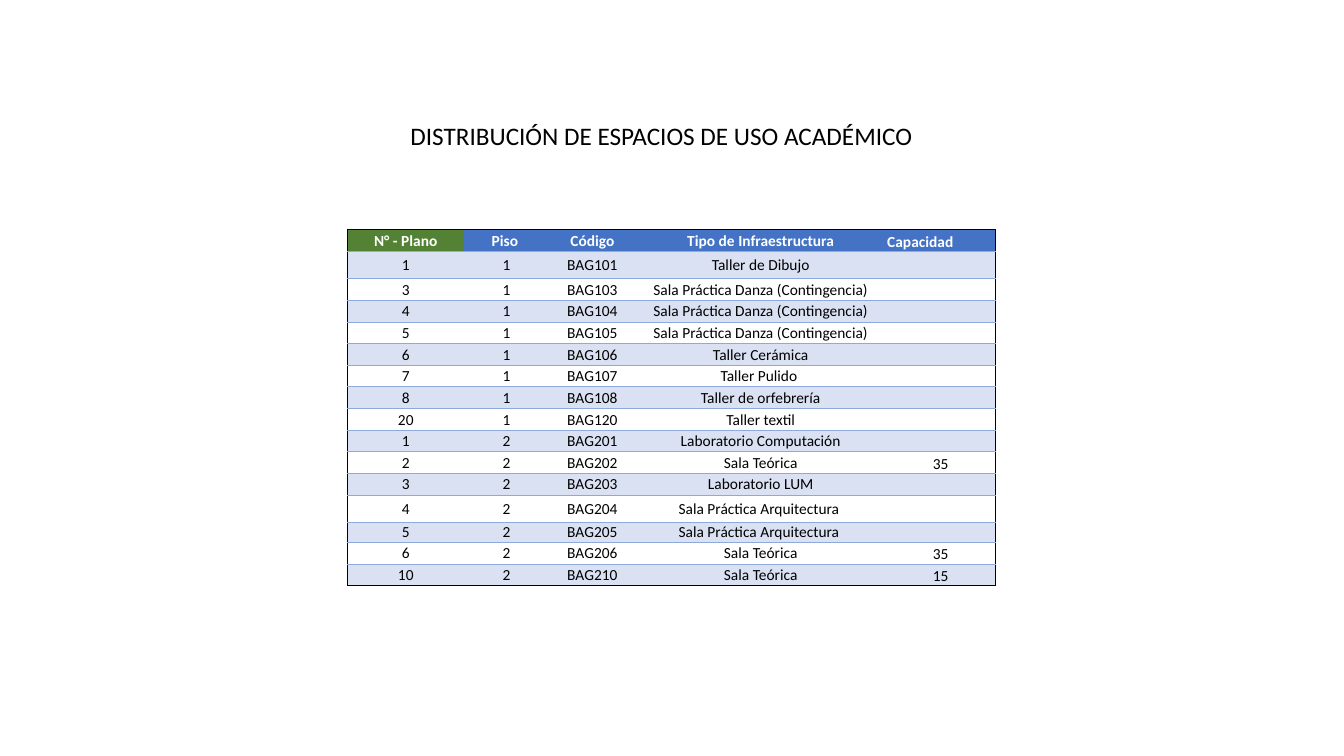
from lxml.etree import SubElement
from pptx import Presentation
from pptx.dml.color import RGBColor
from pptx.enum.text import MSO_ANCHOR as ANCHOR, MSO_AUTO_SIZE as AUTO, PP_ALIGN as ALIGN
from pptx.oxml.ns import qn
from pptx.util import Inches, Pt

BLACK = RGBColor(0x00, 0x00, 0x00)
WHITE = RGBColor(0xFF, 0xFF, 0xFF)
GREEN = RGBColor(0x54, 0x82, 0x35)
BLUE = RGBColor(0x44, 0x72, 0xC4)
BAND = RGBColor(0xD9, 0xE1, 0xF2)
RULE = RGBColor(0x8E, 0xA9, 0xDB)

FONT = "Calibri"
CELL_SIZE = Pt(11)
PLAIN_TABLE = "{2D5ABB26-0587-4C30-8999-92F81FD0307C}"
OUTLINE = (BLACK, 1)
DIVIDER = (RULE, 0.5)

TABLE_HEIGHT = 3.53
COLUMN_WIDTHS = (1.15, 0.85, 0.85, 2.49, 1.08)
SPECIAL_HEIGHTS = {1: 0.27, 12: 0.27, 13: 0.2}
HEADERS = ("N° - Plano", "Piso ", "Código", "Tipo de Infraestructura", "Capacidad")
SPACES = (
    ("1", "1", "BAG101", "Taller de Dibujo", ""),
    ("3", "1", "BAG103", "Sala Práctica Danza (Contingencia)", ""),
    ("4", "1", "BAG104", "Sala Práctica Danza (Contingencia)", ""),
    ("5", "1", "BAG105", "Sala Práctica Danza (Contingencia)", ""),
    ("6", "1", "BAG106", "Taller Cerámica", ""),
    ("7", "1", "BAG107", "Taller Pulido ", ""),
    ("8", "1", "BAG108", "Taller de orfebrería", ""),
    ("20", "1", "BAG120", "Taller textil", ""),
    ("1", "2", "BAG201", "Laboratorio Computación", ""),
    ("2", "2", "BAG202", "Sala Teórica", "35"),
    ("3", "2", "BAG203", "Laboratorio LUM", ""),
    ("4", "2", "BAG204", "Sala Práctica Arquitectura ", ""),
    ("5", "2", "BAG205", "Sala Práctica Arquitectura ", ""),
    ("6", "2", "BAG206", "Sala Teórica", "35"),
    ("10", "2", "BAG210", "Sala Teórica", "15"),
)


def set_all(obj, **values):
    for name, value in values.items():
        setattr(obj, name, value)


def write(p, text, size, color, bold=False):
    r = p.add_run()
    r.text = text
    set_all(r.font, name=FONT, size=size, bold=bold)
    r.font.color.rgb = color


def add_title(s, text):
    sp = s.shapes.title
    set_all(sp, left=Inches(3.97), top=Inches(1.12), width=Inches(5.39), height=Inches(0.41))
    tf = sp.text_frame
    set_all(tf, word_wrap=True, auto_size=AUTO.NONE, vertical_anchor=ANCHOR.TOP)
    p = tf.paragraphs[0]
    set_all(p, alignment=ALIGN.LEFT, line_spacing=1.07, space_before=Pt(0), space_after=Pt(8))
    write(p, text, Pt(18), BLACK)


def set_border(cell, side, line):
    ln = SubElement(cell._tc.get_or_add_tcPr(), qn(f"a:ln{side}"))
    if line is None:
        SubElement(ln, qn("a:noFill"))
        return
    color, width = line
    ln.set("w", str(Pt(width)))
    fill = SubElement(ln, qn("a:solidFill"))
    SubElement(fill, qn("a:srgbClr")).set("val", str(color))


def fill_cell(cell, color):
    if color is None:
        cell.fill.background()
    else:
        cell.fill.solid()
        cell.fill.fore_color.rgb = color


def format_cell(cell, text, row, col):
    last_row, last_col = len(SPACES), len(HEADERS) - 1
    header, capacity = row == 0, col == last_col
    borders = {
        "L": OUTLINE if col == 0 else None,
        "R": OUTLINE if capacity else None,
        "T": OUTLINE if header else DIVIDER,
        "B": OUTLINE if row == last_row else DIVIDER,
    }
    for side, line in borders.items():
        set_border(cell, side, line)
    if header:
        fill_cell(cell, GREEN if col == 0 else BLUE)
    else:
        fill_cell(cell, BAND if row % 2 else None)
    inset = Inches(0.01)
    set_all(cell, margin_left=inset, margin_top=inset, margin_right=inset, margin_bottom=0,
            vertical_anchor=ANCHOR.BOTTOM if capacity else ANCHOR.MIDDLE)
    p = cell.text_frame.paragraphs[0]
    p.alignment = ALIGN.LEFT if header and capacity else ALIGN.CENTER
    if text:
        write(p, text, CELL_SIZE, WHITE if header else BLACK, header)
    else:
        SubElement(p._p, qn("a:endParaRPr")).set("sz", str(CELL_SIZE.centipoints))


def add_spaces_table(s):
    rows = (HEADERS, *SPACES)
    frame = s.shapes.add_table(len(rows), len(HEADERS), Inches(3.45), Inches(2.28),
                               Inches(sum(COLUMN_WIDTHS)), Inches(TABLE_HEIGHT))
    table = frame.table
    set_all(table, first_row=False, horz_banding=False)
    table._tbl.tblPr.find(qn("a:tableStyleId")).text = PLAIN_TABLE
    for column, width in zip(table.columns, COLUMN_WIDTHS):
        column.width = Inches(width)
    regular = (TABLE_HEIGHT - sum(SPECIAL_HEIGHTS.values())) / (len(rows) - len(SPECIAL_HEIGHTS))
    for i, values in enumerate(rows):
        table.rows[i].height = Inches(SPECIAL_HEIGHTS.get(i, regular))
        for j, text in enumerate(values):
            format_cell(table.cell(i, j), text, i, j)


def main():
    prs = Presentation()
    set_all(prs, slide_width=Inches(13.33), slide_height=Inches(7.5))
    s = prs.slides.add_slide(prs.slide_layouts[5])
    add_title(s, "DISTRIBUCIÓN DE ESPACIOS DE USO ACADÉMICO")
    add_spaces_table(s)
    prs.save("out.pptx")


if __name__ == "__main__":
    main()
